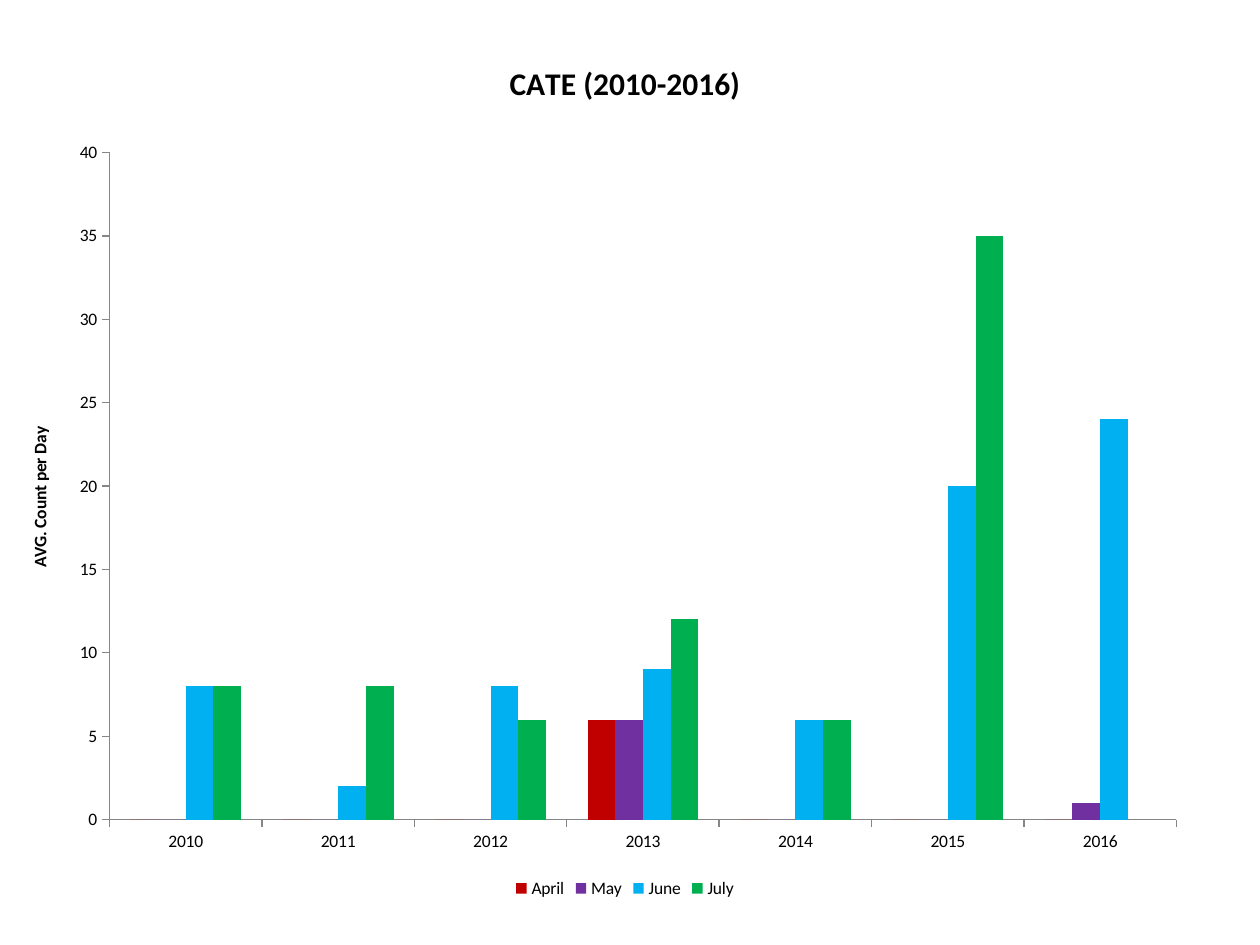
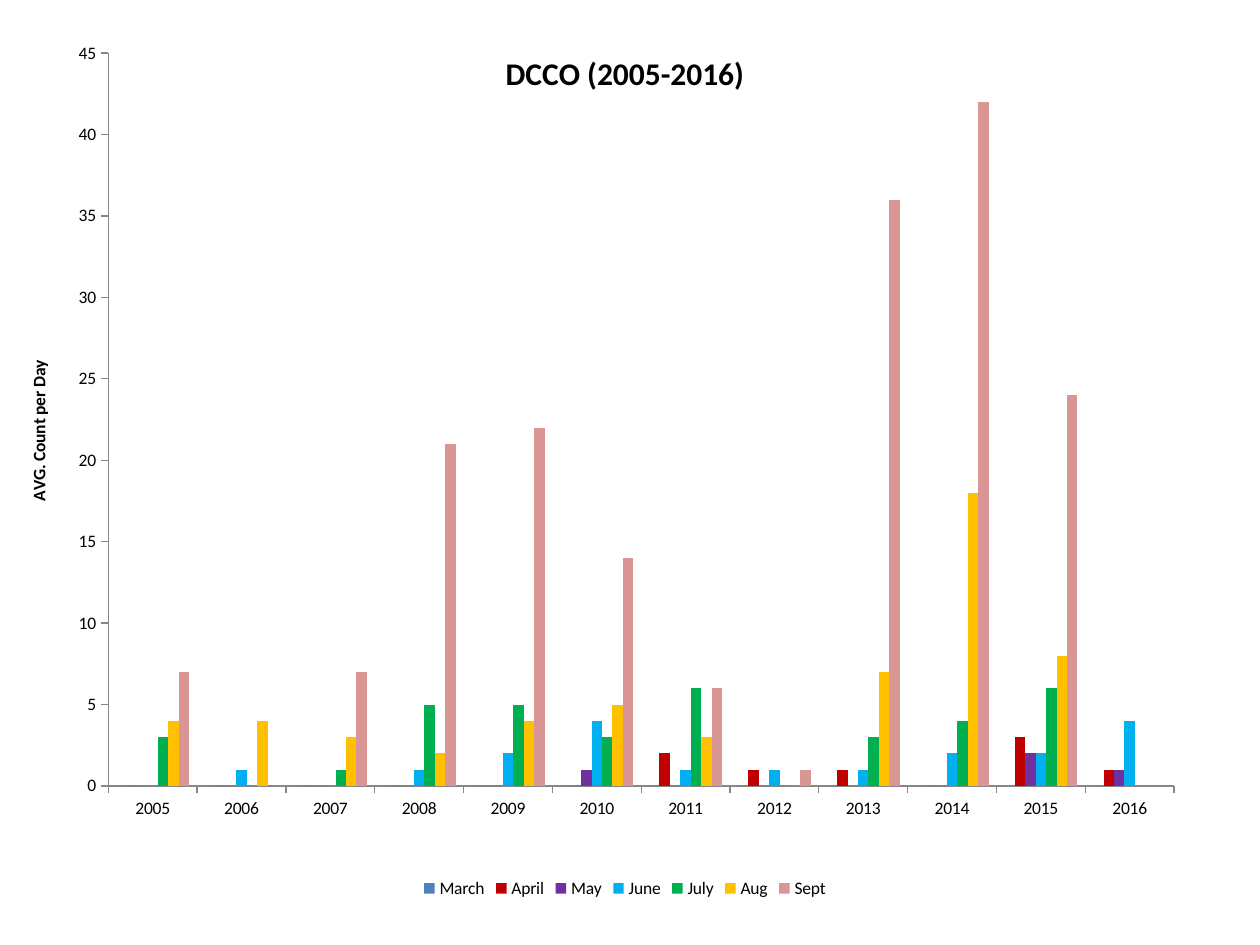
from pptx import Presentation
from pptx.chart import data
from pptx.dml import color
from pptx.enum import chart as kinds
from pptx.oxml import ns, parse_xml
from pptx.util import Inches, Pt

FONT = "Calibri"
BLACK = "000000"
AXIS_GREY = "868686"
VALUE_TITLE = "AVG. Count per Day"
MONTH_COLORS = {
    "March": "4F81BD",
    "April": "C00000",
    "May": "7030A0",
    "June": "00B0F0",
    "July": "00B050",
    "Aug": "FFC000",
    "Sept": "D99694",
}

CATE = {
    "title": "CATE (2010-2016)",
    "box": (0.17, 0.25, 9.58, 6.92),
    "plot": (0.073, 0.139, 0.884, 0.765),
    "years": range(2010, 2017),
    "maximum": 40,
    "months": {
        "April": (0, 0, 0, 6, 0, 0, 0),
        "May": (0, 0, 0, 6, 0, 0, 1),
        "June": (8, 2, 8, 9, 6, 20, 24),
        "July": (8, 8, 6, 12, 6, 35, None),
    },
}

DCCO = {
    "title": "DCCO (2005-2016)",
    "box": (0.17, 0.17, 9.58, 7),
    "plot": (0.072, 0.036, 0.883, 0.831),
    "years": range(2005, 2017),
    "maximum": 45,
    "months": {
        "March": (0, 0, 0, 0, 0, 0, 0, 0, 0, 0, 0, 0),
        "April": (0, 0, 0, 0, 0, 0, 2, 1, 1, 0, 3, 1),
        "May": (0, 0, 0, 0, 0, 1, 0, 0, 0, 0, 2, 1),
        "June": (0, 1, 0, 1, 2, 4, 1, 1, 1, 2, 2, 4),
        "July": (3, 0, 1, 5, 5, 3, 6, 0, 3, 4, 6, None),
        "Aug": (4, 4, 3, 2, 4, 5, 3, 0, 7, 18, 8, None),
        "Sept": (7, 0, 7, 21, 22, 14, 6, 1, 36, 42, 24, None),
    },
}


def rgb(value):
    """Turn a hex string into a colour."""
    return color.RGBColor.from_string(value)


def apply(target, **values):
    """Set each named attribute on the target."""
    for name, value in values.items():
        setattr(target, name, value)


def style_font(font, size, bold=False):
    """Give a font the shared face and colour."""
    apply(font, name=FONT, size=Pt(size), bold=bold)
    font.color.rgb = rgb(BLACK)


def write_title(owner, words, size):
    """Write the bold title of a chart or an axis."""
    frame = owner.text_frame
    frame.text = words
    style_font(frame.paragraphs[0].runs[0].font, size, bold=True)


def place_plot(chart, fractions):
    """Fix the inner plot area at fractions of the chart box."""
    area = chart._chartSpace.chart.plotArea
    for layout in area.findall(ns.qn("c:layout")):
        area.remove(layout)
    sides = "".join(
        f'<c:{side} val="{fraction}"/>' for side, fraction in zip("xywh", fractions)
    )
    area.insert(0, parse_xml(
        f'<c:layout {ns.nsdecls("c")}><c:manualLayout><c:layoutTarget val="inner"/>'
        f'<c:xMode val="edge"/><c:yMode val="edge"/>{sides}</c:manualLayout></c:layout>'
    ))


def style_axes(chart, maximum):
    """Style both axes and title the value axis."""
    for axis in (chart.category_axis, chart.value_axis):
        apply(
            axis,
            has_major_gridlines=False,
            major_tick_mark=kinds.XL_TICK_MARK.OUTSIDE,
            minor_tick_mark=kinds.XL_TICK_MARK.NONE,
        )
        style_font(axis.tick_labels.font, 10)
        axis.format.line.color.rgb = rgb(AXIS_GREY)
        axis.format.line.width = Pt(0.75)
    apply(chart.value_axis, minimum_scale=0, maximum_scale=maximum, major_unit=5)
    apply(chart.value_axis.tick_labels, number_format="0", number_format_is_linked=False)
    write_title(chart.value_axis.axis_title, VALUE_TITLE, 10)


def style_columns(chart):
    """Space the columns and colour them by month."""
    plot = chart.plots[0]
    apply(plot, gap_width=150, overlap=0, vary_by_categories=False)
    for series in plot.series:
        series.invert_if_negative = False
        series.format.fill.solid()
        series.format.fill.fore_color.rgb = rgb(MONTH_COLORS[series.name])


def add_count_slide(presentation, counts):
    """Add a slide with the monthly counts of one bird species."""
    slide = presentation.slides.add_slide(presentation.slide_layouts[6])
    chart_data = data.CategoryChartData(number_format="0")
    chart_data.categories = [str(year) for year in counts["years"]]
    for month, values in counts["months"].items():
        chart_data.add_series(month, values)
    chart = slide.shapes.add_chart(
        kinds.XL_CHART_TYPE.COLUMN_CLUSTERED, *map(Inches, counts["box"]), chart_data
    ).chart
    style_font(chart.font, 10)
    apply(chart, has_title=True, has_legend=True)
    write_title(chart.chart_title, counts["title"], 18)
    apply(chart.legend, position=kinds.XL_LEGEND_POSITION.BOTTOM, include_in_layout=False)
    style_font(chart.legend.font, 10)
    style_axes(chart, counts["maximum"])
    style_columns(chart)
    place_plot(chart, counts["plot"])


def main():
    """Build both slides and save them."""
    presentation = Presentation()
    apply(presentation, slide_width=Inches(10), slide_height=Inches(7.5))
    for counts in (CATE, DCCO):
        add_count_slide(presentation, counts)
    presentation.save("out.pptx")


if __name__ == "__main__":
    main()
